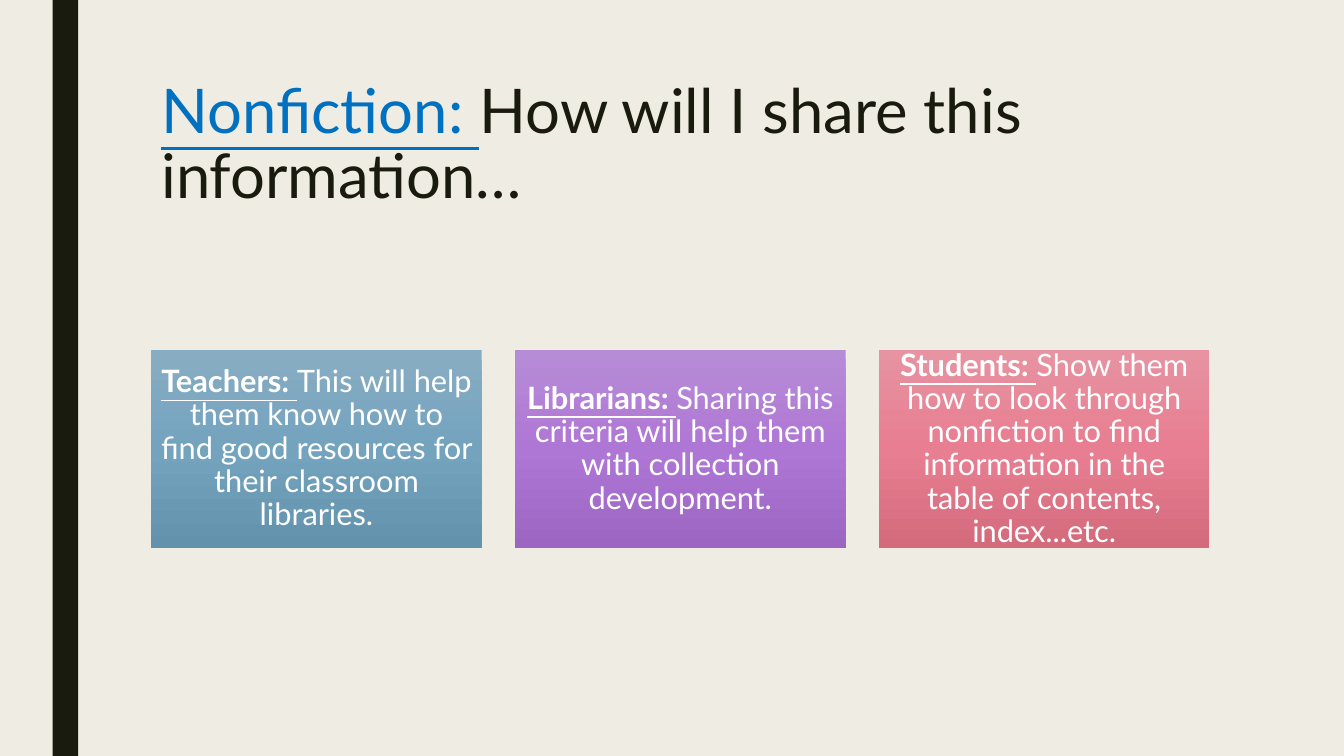
import copy

import pptx
import pptx.dml.color
import pptx.enum.shapes
import pptx.enum.text
import pptx.util

Cm = pptx.util.Cm

COLOURS = {
    "background": "EFEDE3",
    "ink": "191B0E",
    "accent": "0070C0",
    "panel text": "FFFFFF",
}

AUDIENCES = [
    ("Teachers: ",
     "This will help them know how to find good resources for their classroom libraries.",
     ("88ADC3", "74A3BE", "6392AD")),
    ("Librarians: ",
     "Sharing this criteria will help them with collection development.",
     ("B78CD6", "AF77D5", "9C65C2")),
    ("Students: ",
     "Show them how to look through nonfiction to find information in the table of contents, index...etc.",
     ("E793A2", "E77E91", "D36B7D")),
]

MARGIN_LEFT = 3.81
PANEL_TOP = 8.82
PANEL_WIDTH = 8.33
PANEL_HEIGHT = 5.0
PANEL_PITCH = 9.17


def rgb(hex_colour):
    return pptx.dml.color.RGBColor.from_string(hex_colour)


class AudienceSlide:
    font = "Lato"
    title_size = 44
    panel_size = 22

    def __init__(self, deck):
        self.slide = deck.slides.add_slide(deck.slide_layouts[5])
        background = self.slide.background.fill
        background.solid()
        background.fore_color.rgb = rgb(COLOURS["background"])

    def rectangle(self, left, top, width, height):
        shape = self.slide.shapes.add_shape(
            pptx.enum.shapes.MSO_SHAPE.RECTANGLE,
            Cm(left), Cm(top), Cm(width), Cm(height))
        shape.shadow.inherit = False
        shape.line.fill.background()
        return shape

    def stripe(self, left, width, height):
        stripe = self.rectangle(left, 0, width, height)
        stripe.fill.solid()
        stripe.fill.fore_color.rgb = rgb(COLOURS["ink"])

    def lead_in_text(self, frame, lead, rest, size, colour, alignment, spacing):
        """Write one paragraph that opens with an underlined lead; return the lead's run."""
        frame.word_wrap = True
        frame.auto_size = pptx.enum.text.MSO_AUTO_SIZE.NONE
        paragraph = frame.paragraphs[0]
        paragraph.alignment = alignment
        paragraph.line_spacing = spacing
        paragraph.font.name = self.font
        paragraph.font.size = pptx.util.Pt(size)
        paragraph.font.color.rgb = rgb(colour)
        lead_run = paragraph.add_run()
        lead_run.text = lead
        lead_run.font.underline = True
        paragraph.add_run().text = rest
        return lead_run

    def title(self, lead, rest):
        title = self.slide.shapes.title
        title.left, title.top = Cm(MARGIN_LEFT), Cm(1.9)
        title.width, title.height = Cm(26.67), Cm(4.12)
        title.text_frame.vertical_anchor = pptx.enum.text.MSO_ANCHOR.TOP
        lead_run = self.lead_in_text(
            title.text_frame, lead, rest, self.title_size, COLOURS["ink"],
            pptx.enum.text.PP_ALIGN.LEFT, 0.89)
        lead_run.font.color.rgb = rgb(COLOURS["accent"])

    def panel(self, left, lead, rest, shades):
        panel = self.rectangle(left, PANEL_TOP, PANEL_WIDTH, PANEL_HEIGHT)
        self.shade_downwards(panel, shades)
        frame = panel.text_frame
        frame.margin_left = frame.margin_right = Cm(0.23)
        frame.margin_top = frame.margin_bottom = Cm(0.23)
        frame.vertical_anchor = pptx.enum.text.MSO_ANCHOR.MIDDLE
        lead_run = self.lead_in_text(
            frame, lead, rest, self.panel_size, COLOURS["panel text"],
            pptx.enum.text.PP_ALIGN.CENTER, 0.9)
        lead_run.font.bold = True

    def shade_downwards(self, shape, shades):
        """Fill with three evenly spaced shades, the first at the top."""
        shape.fill.gradient()
        shape.fill.gradient_angle = 270
        stop_list = shape.element.xpath(".//a:gsLst")[0]
        stop_list.insert(1, copy.deepcopy(stop_list[0]))
        for index, (stop, shade) in enumerate(zip(shape.fill.gradient_stops, shades)):
            stop.position = index / 2
            stop.color.rgb = rgb(shade)


def main():
    deck = pptx.Presentation()
    deck.slide_width, deck.slide_height = Cm(33.87), Cm(19.05)
    page = AudienceSlide(deck)
    page.stripe(1.33, 0.64, 19.05)
    page.title("Nonfiction: ", "How will I share this information…")
    for column, (lead, rest, shades) in enumerate(AUDIENCES):
        page.panel(MARGIN_LEFT + column * PANEL_PITCH, lead, rest, shades)
    deck.save("out.pptx")


if __name__ == "__main__":
    main()
